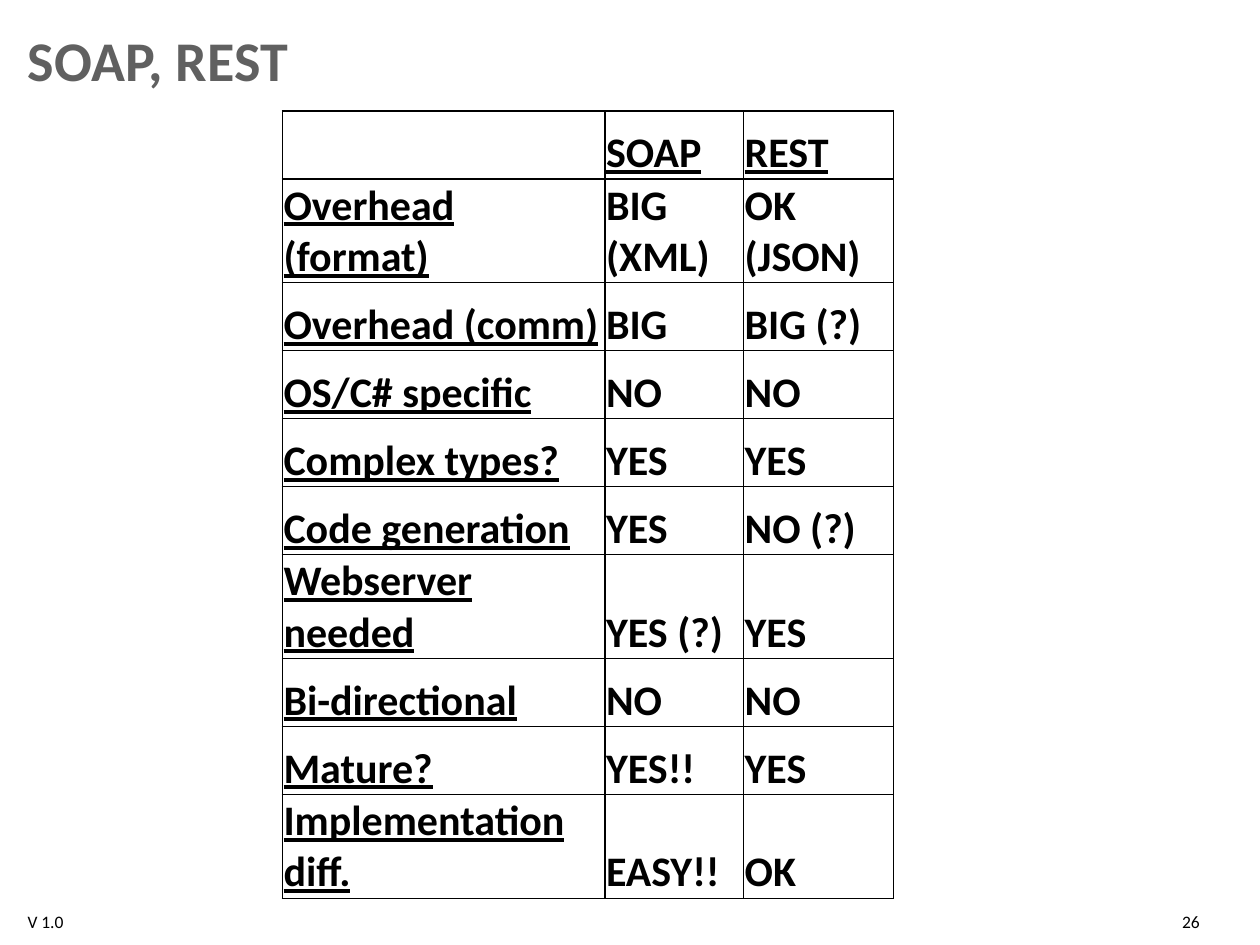
from lxml.etree import SubElement
from pptx import Presentation
from pptx.dml.color import RGBColor
from pptx.enum.text import MSO_ANCHOR as Anchor, PP_ALIGN as Align
from pptx.oxml.ns import qn
from pptx.util import Inches, Pt

TITLE = "SOAP, REST"
ROWS = [
    ("", "SOAP", "REST"),
    ("Overhead (format)", "BIG (XML)", "OK (JSON)"),
    ("Overhead (comm)", "BIG", "BIG (?)"),
    ("OS/C# specific", "NO", "NO"),
    ("Complex types?", "YES", "YES"),
    ("Code generation", "YES", "NO (?)"),
    ("Webserver needed", "YES (?)", "YES"),
    ("Bi-directional", "NO", "NO"),
    ("Mature?", "YES!!", "YES"),
    ("Implementation diff.", "EASY!!", "OK"),
]
FOOTERS = [
    ("V 1.0", 0.12, 0.79, Align.LEFT),
    ("26", 8.31, 1.31, Align.RIGHT),
]
COLUMN_WIDTHS = (2.56, 1.1, 1.19)
ROW_HEIGHT = 0.54
THEME = {
    "font": "Calibri",
    "title": "606060",
    "text": "000000",
    "border": "000000",
    "title_size": 32,
    "table_size": 24,
    "footer_size": 10,
    "border_width": 1,
}


def style_text(text_frame, size, color, bold=False, underline=False):
    for paragraph in text_frame.paragraphs:
        for run in paragraph.runs:
            font = run.font
            font.name = THEME["font"]
            font.size = Pt(size)
            font.bold = bold
            font.underline = underline
            font.color.rgb = RGBColor.from_string(color)


def add_borders(cell):
    properties = cell._tc.get_or_add_tcPr()
    for index, side in enumerate(("lnL", "lnR", "lnT", "lnB")):
        line = properties.makeelement(
            qn(f"a:{side}"), {"w": str(Pt(THEME["border_width"]))}
        )
        fill = SubElement(line, qn("a:solidFill"))
        SubElement(fill, qn("a:srgbClr"), val=THEME["border"])
        properties.insert(index, line)


def add_title(slide):
    title = slide.shapes.title
    title.left, title.top = Inches(0.12), Inches(0.13)
    title.width, title.height = Inches(9.76), Inches(0.63)
    text_frame = title.text_frame
    text_frame.text = TITLE
    text_frame.vertical_anchor = Anchor.BOTTOM
    text_frame.margin_bottom = Inches(0.02)
    text_frame.paragraphs[0].alignment = Align.LEFT
    style_text(text_frame, THEME["title_size"], THEME["title"], bold=True)


def add_comparison(slide):
    table = slide.shapes.add_table(
        len(ROWS), len(COLUMN_WIDTHS), Inches(2.24), Inches(0.88),
        Inches(sum(COLUMN_WIDTHS)), Inches(ROW_HEIGHT * len(ROWS)),
    ).table
    table.first_row = table.horz_banding = False
    for column, width in zip(table.columns, COLUMN_WIDTHS):
        column.width = Inches(width)
    for row_index, values in enumerate(ROWS):
        table.rows[row_index].height = Inches(ROW_HEIGHT)
        for column_index, value in enumerate(values):
            cell = table.cell(row_index, column_index)
            cell.text = value
            cell.fill.background()
            cell.vertical_anchor = Anchor.BOTTOM
            cell.margin_left = cell.margin_right = cell.margin_top = Inches(0.01)
            cell.margin_bottom = 0
            is_header = row_index == 0 or column_index == 0
            style_text(cell.text_frame, THEME["table_size"], THEME["text"],
                       bold=True, underline=is_header)
            add_borders(cell)


def add_footers(slide):
    for text, left, width, alignment in FOOTERS:
        box = slide.shapes.add_textbox(
            Inches(left), Inches(7.18), Inches(width), Inches(0.2)
        )
        text_frame = box.text_frame
        text_frame.word_wrap = True
        text_frame.text = text
        text_frame.paragraphs[0].alignment = alignment
        style_text(text_frame, THEME["footer_size"], THEME["text"])


def main():
    presentation = Presentation()
    presentation.slide_width = Inches(10)
    presentation.slide_height = Inches(7.5)
    slide = presentation.slides.add_slide(presentation.slide_layouts[5])
    add_title(slide)
    add_comparison(slide)
    add_footers(slide)
    presentation.save("out.pptx")


if __name__ == "__main__":
    main()
